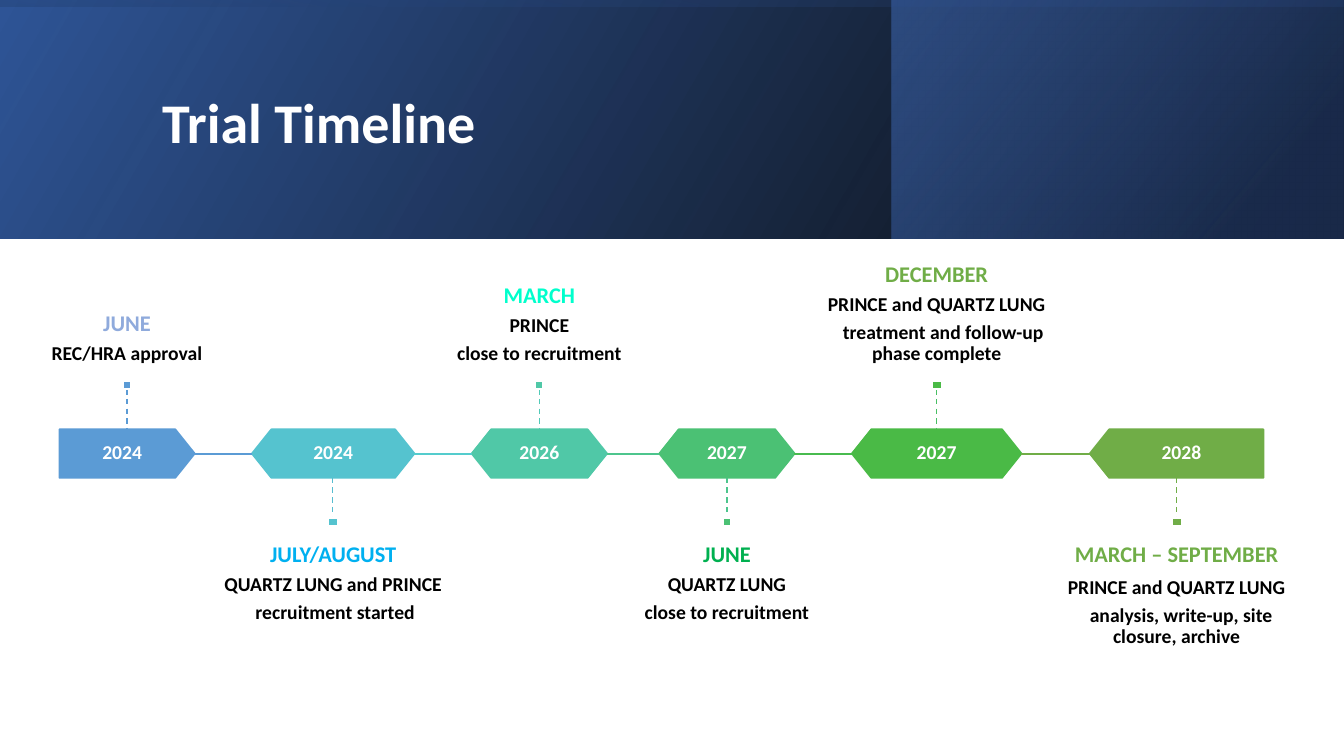
from dataclasses import dataclass
from itertools import pairwise
from typing import Any

import lxml.etree
import pptx
import pptx.dml.color
import pptx.enum.dml
import pptx.enum.shapes
import pptx.enum.text
import pptx.oxml.ns
import pptx.util

EMU_PER_PX = 9144
FONT = "Calibri"
WHITE = "FFFFFF"
BLACK = "000000"

BAR_TOP = 426
BAR_HEIGHT = 48
STEM_LENGTH = 40
MARKER_HEIGHT = 8
CAPTION_HEIGHT = 129
CAPTION_ABOVE_TOP = 249
CAPTION_BELOW_TOP = 523
CAPTION_MARGIN = 16

Preset = pptx.enum.shapes.MSO_SHAPE
Anchor = pptx.enum.text.MSO_ANCHOR
Align = pptx.enum.text.PP_ALIGN


@dataclass(frozen=True)
class GradientStop:
    position: float
    color: str
    opacity: int


@dataclass(frozen=True)
class BannerLayer:
    left: int
    top: int
    width: int
    height: int
    angle: int
    stops: tuple[GradientStop, GradientStop]
    rotation: int = 0


@dataclass(frozen=True)
class Milestone:
    year: str
    month: str
    details: tuple[str, ...]
    left: int
    width: int
    color: str
    stem_color: str
    link_color: str
    month_color: str
    caption_width: int
    above: bool
    preset: Any = Preset.HEXAGON
    mirrored: bool = False
    marker_width: int = 8
    month_gap: int = 5
    last_indent: int = 0

    @property
    def center(self) -> int:
        return self.left + self.width // 2


BANNER = (
    BannerLayer(0, 0, 1333, 237, 30,
                (GradientStop(0, "000000", 96), GradientStop(1, "2F5597", 100))),
    BannerLayer(884, 0, 448, 237, 40,
                (GradientStop(0.19, "203864", 68), GradientStop(1, "4472C4", 48))),
    BannerLayer(548, -548, 237, 1333, 10,
                (GradientStop(0.23, "2F5597", 16), GradientStop(0.99, "000000", 45)), 270),
)

MILESTONES = (
    Milestone("2024", "JUNE", ("REC/HRA approval",), 59, 134,
              "5B9BD5", "5B9BD5", "5B9BD5", "8FAADC", 186, True, Preset.PENTAGON),
    Milestone("2024", "JULY/AUGUST", ("QUARTZ LUNG and PRINCE", "recruitment started"), 250, 161,
              "55C3CF", "56BCD0", "54CCCD", "00B0F0", 223, False, marker_width=10, last_indent=4),
    Milestone("2026", "MARCH", ("PRINCE", "close to recruitment"), 468, 134,
              "50C8A7", "52CAB8", "4DC58D", "00FFCC", 186, True),
    Milestone("2027", "JUNE", ("QUARTZ LUNG", "close to recruitment"), 654, 134,
              "4BC174", "4DC58D", "48BB4F", "00B050", 186, False),
    Milestone("2027", "DECEMBER", ("PRINCE and QUARTZ LUNG", "treatment and follow-up phase complete"),
              845, 168, "4ABA46", "49BF64", "70AD47", "70AD47", 234, True,
              marker_width=10, last_indent=13),
    Milestone("2028", "MARCH – SEPTEMBER", ("PRINCE and QUARTZ LUNG", "analysis, write-up, site closure, archive"),
              1081, 172, "70AD47", "70AD47", "70AD47", "70AD47", 238, False, Preset.PENTAGON,
              mirrored=True, marker_width=10, month_gap=7, last_indent=9),
)


def px(length: int) -> pptx.util.Emu:
    return pptx.util.Emu(length * EMU_PER_PX)


def rgb(color: str) -> pptx.dml.color.RGBColor:
    return pptx.dml.color.RGBColor.from_string(color)


def mirror(shape: Any) -> None:
    shape.element.spPr.find(pptx.oxml.ns.qn("a:xfrm")).set("flipH", "1")


def draw_shape(slide: Any, preset: Any, left: int, top: int, width: int, height: int) -> Any:
    shape = slide.shapes.add_shape(preset, px(left), px(top), px(width), px(height))
    shape.shadow.inherit = False
    return shape


def paint(shape: Any, fill: str, line: str) -> None:
    shape.fill.solid()
    shape.fill.fore_color.rgb = rgb(fill)
    shape.line.color.rgb = rgb(line)
    shape.line.width = pptx.util.Pt(1.35)


def draw_line(slide: Any, x1: int, y1: int, x2: int, y2: int, color: str, width: float) -> Any:
    line = slide.shapes.add_connector(
        pptx.enum.shapes.MSO_CONNECTOR.STRAIGHT, px(x1), px(y1), px(x2), px(y2))
    line.line.color.rgb = rgb(color)
    line.line.width = pptx.util.Pt(width)
    lxml.etree.SubElement(line.element.spPr, pptx.oxml.ns.qn("a:effectLst"))
    return line


def style(paragraph: Any, size: int, color: str, align: Any, gap: int) -> None:
    paragraph.alignment = align
    paragraph.line_spacing = 0.9
    paragraph.space_after = pptx.util.Pt(gap)
    for run in paragraph.runs:
        run.font.name = FONT
        run.font.size = pptx.util.Pt(size)
        run.font.bold = True
        run.font.color.rgb = rgb(color)


def draw_layer(slide: Any, layer: BannerLayer) -> None:
    panel = draw_shape(slide, Preset.RECTANGLE, layer.left, layer.top, layer.width, layer.height)
    panel.rotation = layer.rotation
    mirror(panel)
    panel.line.fill.background()
    panel.fill.gradient()
    panel.fill.gradient_angle = layer.angle
    for stop, wanted in zip(panel.fill.gradient_stops, layer.stops):
        stop.position = wanted.position
        stop.color.rgb = rgb(wanted.color)
    tints = panel.element.spPr.iter(pptx.oxml.ns.qn("a:srgbClr"))
    for tint, wanted in zip(list(tints), layer.stops):
        alpha = lxml.etree.SubElement(tint, pptx.oxml.ns.qn("a:alpha"))
        alpha.set("val", str(wanted.opacity * 1000))


def draw_title(slide: Any) -> None:
    title = slide.shapes.add_textbox(px(151), px(38), px(1063), px(172)).text_frame
    title.word_wrap = True
    title.vertical_anchor = Anchor.MIDDLE
    title.text = "Trial Timeline"
    style(title.paragraphs[0], 40, WHITE, Align.LEFT, 6)


def draw_caption(slide: Any, milestone: Milestone) -> None:
    top = CAPTION_ABOVE_TOP if milestone.above else CAPTION_BELOW_TOP
    caption = slide.shapes.add_textbox(
        px(milestone.center - milestone.caption_width // 2), px(top),
        px(milestone.caption_width), px(CAPTION_HEIGHT)).text_frame
    caption.word_wrap = True
    caption.vertical_anchor = Anchor.BOTTOM if milestone.above else Anchor.TOP
    caption.margin_left = caption.margin_right = 0
    caption.margin_top = caption.margin_bottom = px(CAPTION_MARGIN)
    caption.text = "\n".join((milestone.month, *milestone.details))
    month, *details = caption.paragraphs
    style(month, 16, milestone.month_color, Align.CENTER, milestone.month_gap)
    for detail in details:
        style(detail, 14, BLACK, Align.CENTER, 5)
    if milestone.last_indent:
        details[-1]._p.get_or_add_pPr().set("indent", str(px(milestone.last_indent)))


def draw_milestone(slide: Any, milestone: Milestone) -> None:
    bar = draw_shape(slide, milestone.preset, milestone.left, BAR_TOP, milestone.width, BAR_HEIGHT)
    bar.adjustments[0] = 0.4
    paint(bar, milestone.color, milestone.color)
    if milestone.mirrored:
        mirror(bar)
    year = bar.text_frame
    year.margin_left = year.margin_right = year.margin_top = year.margin_bottom = 0
    year.vertical_anchor = Anchor.MIDDLE
    year.text = milestone.year
    style(year.paragraphs[0], 14, WHITE, Align.CENTER, 0)

    draw_caption(slide, milestone)
    stem_top = BAR_TOP - STEM_LENGTH if milestone.above else BAR_TOP + BAR_HEIGHT
    stem = draw_line(slide, milestone.center, stem_top, milestone.center,
                     stem_top + STEM_LENGTH, milestone.stem_color, 1)
    stem.line.dash_style = pptx.enum.dml.MSO_LINE.DASH
    marker_top = stem_top - MARKER_HEIGHT if milestone.above else stem_top + STEM_LENGTH
    marker = draw_shape(slide, Preset.RECTANGLE, milestone.center - milestone.marker_width // 2,
                        marker_top, milestone.marker_width, MARKER_HEIGHT)
    paint(marker, milestone.color, WHITE)


def main() -> None:
    deck = pptx.Presentation()
    deck.slide_width, deck.slide_height = px(1333), px(750)
    slide = deck.slides.add_slide(deck.slide_layouts[6])
    for layer in BANNER:
        draw_layer(slide, layer)
    draw_title(slide)
    for milestone in MILESTONES:
        draw_milestone(slide, milestone)
    for earlier, later in pairwise(MILESTONES):
        middle = BAR_TOP + BAR_HEIGHT // 2
        draw_line(slide, earlier.left + earlier.width, middle, later.left, middle,
                  earlier.link_color, 1.35)
    deck.save("out.pptx")


if __name__ == "__main__":
    main()
